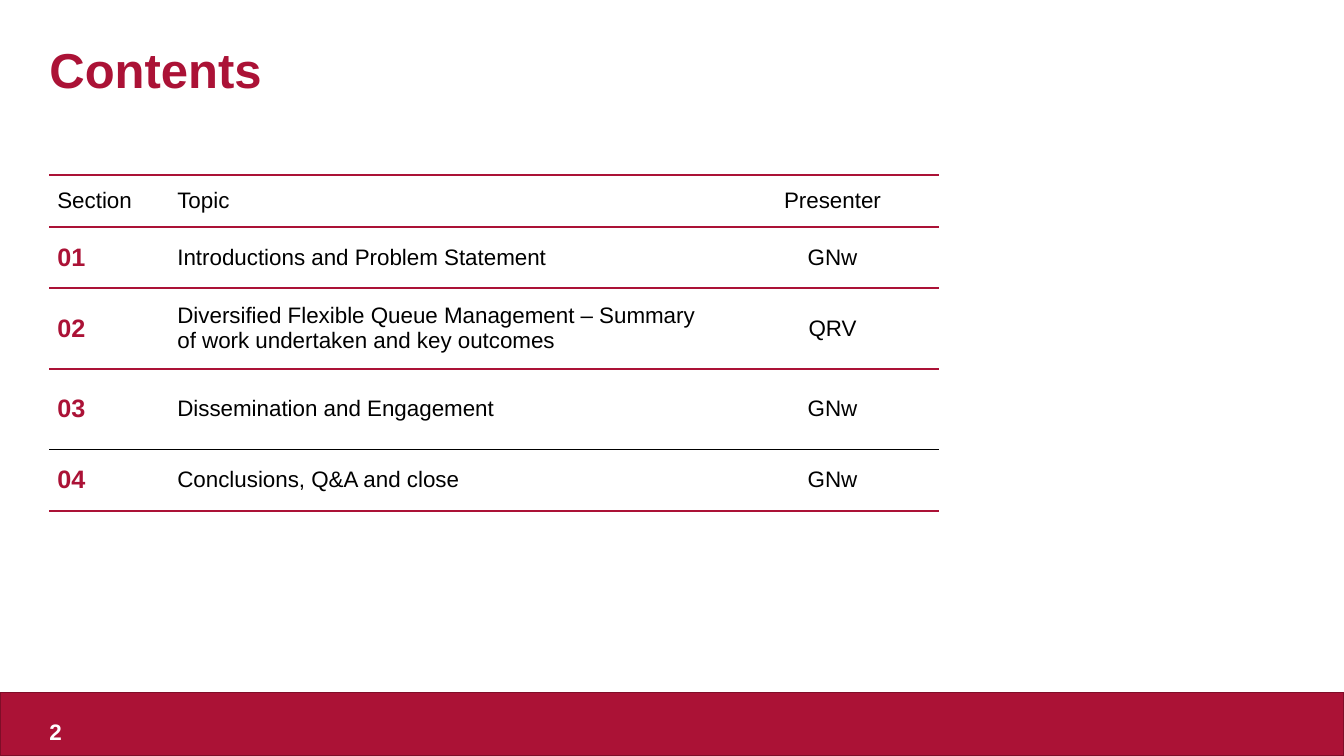
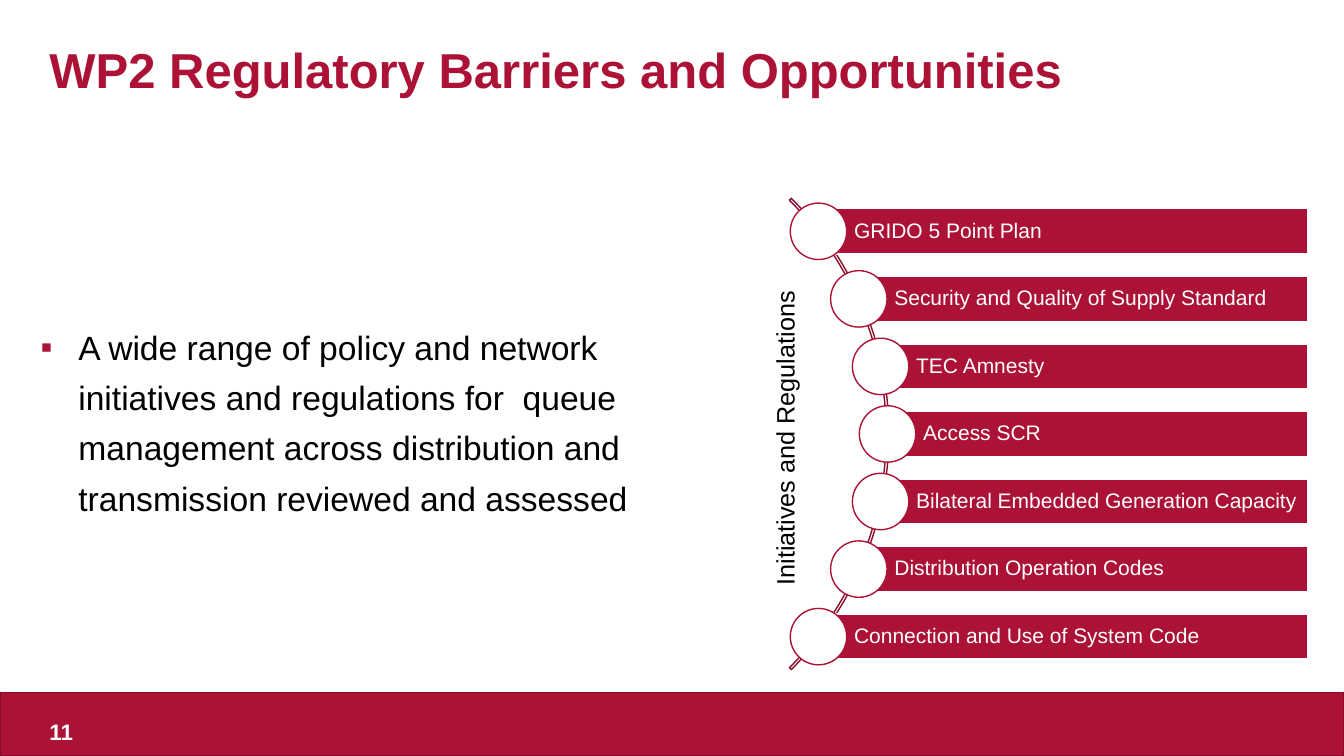
"""Build the contents slide and the regulatory barriers slide."""
from math import sqrt

from lxml.etree import SubElement
from pptx import Presentation
from pptx.dml.color import RGBColor
from pptx.enum.shapes import MSO_SHAPE as Preset
from pptx.enum.text import MSO_ANCHOR as Anchor, PP_ALIGN as Align
from pptx.oxml import parse_xml
from pptx.oxml.ns import nsdecls, qn
from pptx.util import Pt

COLORS = {
    "crimson": "AB1236",
    "edge": "7F0D28",
    "arc": "890E2B",
    "white": "FFFFFF",
    "black": "000000",
}
FONT = "Arial"
SLIDE_WIDTH, SLIDE_HEIGHT = 960, 540
MARGIN = 35.3
NO_INSETS = (0, 0, 0, 0)
TITLE_BOX = (MARGIN, 33, 885.6, 100)
BAND_BOX = (0, 494.6, SLIDE_WIDTH, 45.4)
NUMBER_BOX = (MARGIN, 511.2, 30, 22.3)

AGENDA_HEADS = ("Section", "Topic", "Presenter")
AGENDA = [
    ("Introductions and Problem Statement", "GNw"),
    ("Diversified Flexible Queue Management – Summary of work undertaken "
     "and key outcomes", "QRV"),
    ("Dissemination and Engagement", "GNw"),
    ("Conclusions, Q&A and close", "GNw"),
]
AGENDA_COLUMNS = (85.7, 397.4, 152.6)
AGENDA_ROWS = (36.8, 43.8, 57.6, 57.6, 43.8)
THIN_RULE_ROW = 3

INITIATIVES = [
    "GRIDO 5 Point Plan",
    "Security and Quality of Supply Standard",
    "TEC Amnesty",
    "Access SCR",
    "Bilateral Embedded Generation Capacity",
    "Distribution Operation Codes",
    "Connection and Use of System Code",
]
FINDING = ("A wide range of policy and network initiatives and regulations for  queue "
           "management across distribution and transmission reviewed and assessed")


def rgb(name):
    """Return the named colour."""
    return RGBColor.from_string(COLORS[name])


def assign(target, formats):
    """Set every attribute named in the formats."""
    for name, value in formats.items():
        setattr(target, name, value)


def place(shape, box):
    """Move a shape to a box given in points."""
    assign(shape, dict(zip(("left", "top", "width", "height"), map(Pt, box))))


def write(frame, text, size, color, insets=None, anchor=Anchor.TOP, bold=False,
          **paragraph_formats):
    """Fill a text frame with one formatted paragraph."""
    assign(frame, {"word_wrap": True, "vertical_anchor": anchor})
    if insets:
        sides = ("margin_left", "margin_top", "margin_right", "margin_bottom")
        assign(frame, dict(zip(sides, map(Pt, insets))))
    frame.text = text
    paragraph = frame.paragraphs[0]
    assign(paragraph, {"alignment": Align.LEFT, **paragraph_formats})
    font = paragraph.runs[0].font
    assign(font, {"name": FONT, "size": Pt(size), "bold": bold})
    font.color.rgb = rgb(color)
    return paragraph


def add_label(slide, box, text, size, color, **formats):
    """Add a text box and return it."""
    label = slide.shapes.add_textbox(*map(Pt, box))
    write(label.text_frame, text, size, color, **formats)
    return label


def add_preset(slide, preset, box, fill, line):
    """Add a flat preset shape."""
    shape = slide.shapes.add_shape(preset, *map(Pt, box))
    shape.shadow.inherit = False
    if fill:
        shape.fill.solid()
        shape.fill.fore_color.rgb = rgb(fill)
    else:
        shape.fill.background()
    shape.line.color.rgb = rgb(line)
    shape.line.width = Pt(1)
    return shape


def add_layout_band(layout, slide):
    """Draw the footer band and hand it to the shared layout."""
    band = add_preset(slide, Preset.RECTANGLE, BAND_BOX, "crimson", "edge")
    layout.shapes.element.append(band.element)


def add_titled_slide(deck, layout, title, number):
    """Add a slide with the shared title style and slide number."""
    slide = deck.slides.add_slide(layout)
    heading = slide.shapes.title
    place(heading, TITLE_BOX)
    write(heading.text_frame, title, 35, "crimson", insets=NO_INSETS, bold=True,
          line_spacing=0.9)
    add_label(slide, NUMBER_BOX, number, 16, "white", insets=NO_INSETS,
              anchor=Anchor.MIDDLE, bold=True)
    return slide


def rule_cell(cell, rules):
    """Set the top and bottom rules of a cell and clear its sides."""
    properties = cell._tc.get_or_add_tcPr()
    for index, side in enumerate(("lnL", "lnR", "lnT", "lnB")):
        border = parse_xml(f'<a:{side} {nsdecls("a")}/>')
        if side in rules:
            color, width = rules[side]
            border.set("w", str(Pt(width)))
            fill = SubElement(border, qn("a:solidFill"))
            SubElement(fill, qn("a:srgbClr")).set("val", COLORS[color])
        else:
            SubElement(border, qn("a:noFill"))
        properties.insert(index, border)


def add_agenda(slide, left, top):
    """Add the agenda table with its corner at the given point."""
    rows = [AGENDA_HEADS] + [(f"{number:02}", *entry)
                             for number, entry in enumerate(AGENDA, 1)]
    box = (left, top, sum(AGENDA_COLUMNS), sum(AGENDA_ROWS))
    agenda = slide.shapes.add_table(len(rows), len(AGENDA_HEADS), *map(Pt, box)).table
    assign(agenda, {"first_row": False, "horz_banding": False})
    for column, width in zip(agenda.columns, AGENDA_COLUMNS):
        column.width = Pt(width)
    rules = [("crimson", 1.5)] * (len(rows) + 1)
    rules[THIN_RULE_ROW + 1] = ("black", 0.75)
    for r, (entry, height) in enumerate(zip(rows, AGENDA_ROWS)):
        agenda.rows[r].height = Pt(height)
        for c, text in enumerate(entry):
            cell = agenda.cell(r, c)
            cell.fill.background()
            sides = ("margin_left", "margin_top", "margin_right", "margin_bottom")
            assign(cell, dict.fromkeys(sides, Pt(5.7)))
            is_number = r > 0 and c == 0
            write(cell.text_frame, text, 18 if is_number else 16,
                  "crimson" if is_number else "black", bold=is_number,
                  alignment=Align.CENTER if c == 2 else Align.LEFT)
            cell.vertical_anchor = Anchor.MIDDLE
            rule_cell(cell, {"lnT": rules[r], "lnB": rules[r + 1]})


def add_finding(slide, box):
    """Add the bulleted finding."""
    finding = slide.shapes.add_textbox(*map(Pt, box))
    paragraph = write(finding.text_frame, FINDING, 24, "black", insets=NO_INSETS,
                      line_spacing=1.25)
    properties = paragraph._p.get_or_add_pPr()
    assign_indent = {"marL": Pt(27), "indent": Pt(-27)}
    for name, value in assign_indent.items():
        properties.set(name, str(value))
    bullet_color = SubElement(properties, qn("a:buClr"))
    SubElement(bullet_color, qn("a:srgbClr")).set("val", COLORS["crimson"])
    SubElement(properties, qn("a:buFont")).set("typeface", FONT)
    SubElement(properties, qn("a:buChar")).set("char", "▪")


def add_initiatives(slide, box):
    """Add bars whose round markers follow an arc of the given box's circle."""
    left, top, diameter, right = box
    center_x, center_y = left + diameter / 2, top + diameter / 2
    radius = diameter / 2 - 1
    pitch, bar_height, marker = 48.25, 32.2, 40.3
    arc = add_preset(slide, Preset.BLOCK_ARC, (left, top, diameter, diameter), None, "arc")
    for index, value in enumerate((189, 27, 0.004)):
        arc.adjustments[index] = value
    for index, initiative in enumerate(INITIATIVES):
        offset = (index - (len(INITIATIVES) - 1) / 2) * pitch
        x, y = center_x + sqrt(radius ** 2 - offset ** 2), center_y + offset
        bar = add_preset(slide, Preset.RECTANGLE,
                         (x, y - bar_height / 2, right - x, bar_height),
                         "crimson", "white")
        write(bar.text_frame, initiative, 15, "white", insets=(25.4, 2.9, 2.9, 2.9),
              anchor=Anchor.MIDDLE, line_spacing=0.9)
        add_preset(slide, Preset.OVAL,
                   (x - marker / 2, y - marker / 2, marker, marker), "white", "crimson")
    caption = add_label(slide, (442, 292.3, 237, 29), "Initiatives and Regulations",
                        18, "black")
    caption.rotation = 270


def main():
    """Build and save the deck."""
    deck = Presentation()
    assign(deck, {"slide_width": Pt(SLIDE_WIDTH), "slide_height": Pt(SLIDE_HEIGHT)})
    layout = deck.slide_layouts.get_by_name("Title Only")

    contents = add_titled_slide(deck, layout, "Contents", "2")
    add_layout_band(layout, contents)
    add_agenda(contents, MARGIN, 125.2)

    barriers = add_titled_slide(deck, layout,
                                "WP2 Regulatory Barriers and Opportunities", "11")
    add_finding(barriers, (29, 226, 476, 153.4))
    add_initiatives(barriers, (159, 72, 476, 934))
    deck.save("out.pptx")


if __name__ == "__main__":
    main()
